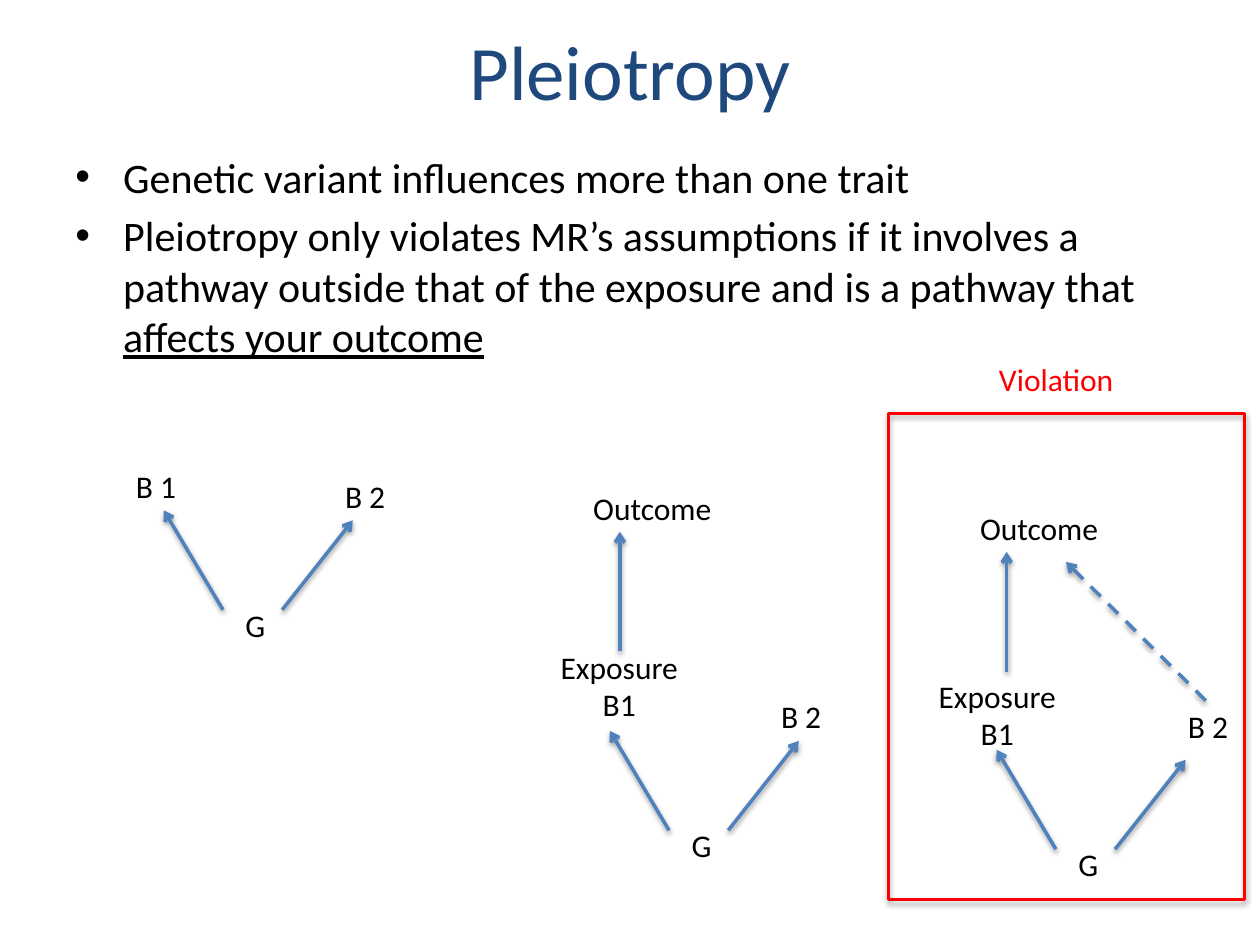
from lxml import etree
from pptx import Presentation
from pptx.dml.color import RGBColor
from pptx.enum import dml, shapes, text
from pptx.oxml import ns
from pptx.util import Inches, Pt

FONT = "Calibri"
BLACK, RED, BLUE, NAVY = "000000", "FF0000", "4F81BD", "1F497D"

TITLE = "Pleiotropy"
BULLETS = [
    [("Genetic variant influences more than one trait", False)],
    [("Pleiotropy only violates MR’s assumptions if it involves a pathway "
      "outside that of the exposure and is a pathway that ", False),
     ("affects your outcome", True)],
]

# Each diagram: gene position, labels as (lines, left, top, width), outcome position
DIAGRAMS = [
    {"gene": (1.85, 4.76), "outcome": None,
     "labels": [(["B 1"], 0.98, 3.66, 1.57), (["B 2"], 2.64, 3.74, 1.57)]},
    {"gene": (5.39, 6.51), "outcome": (4.61, 3.83),
     "labels": [(["Exposure", "B1"], 4.13, 5.09, 1.57), (["B 2"], 6.1, 5.48, 0.71)]},
    {"gene": (8.46, 6.66), "outcome": (7.68, 3.99),
     "labels": [(["Exposure", "B1"], 7.13, 5.32, 1.57), (["B 2"], 9.33, 5.56, 0.71)]},
]
# Arrow ends measured from the corner of the label they belong to
GENE_ARROWS = [((-0.08, 0.08), (-0.55, -0.71)), ((0.39, 0.08), (0.95, -0.63))]
OUTCOME_ARROW = ((0.31, 1.34), (0.31, 0.39))
SIDE_PATH = ((9.57, 5.56), (8.46, 4.46))
VIOLATION_FRAME = (7.05, 3.28, 2.83, 3.86)


def color(value):
    return RGBColor.from_string(value)


def add_span(para, words, size=18, fill=BLACK, underline=None):
    span = para.add_run()
    span.text = words
    span.font.name = FONT
    span.font.size = Pt(size)
    span.font.color.rgb = color(fill)
    span.font.underline = underline


def add_label(page, lines, left, top, width, fill=BLACK, wrap=True):
    box = page.shapes.add_textbox(Inches(left), Inches(top), Inches(width),
                                  Inches(0.4 if len(lines) == 1 else 0.71))
    frame = box.text_frame
    frame.word_wrap = wrap
    frame.auto_size = text.MSO_AUTO_SIZE.SHAPE_TO_FIT_TEXT
    for index, line in enumerate(lines):
        para = frame.paragraphs[0] if index == 0 else frame.add_paragraph()
        if len(lines) > 1:
            para.alignment = text.PP_ALIGN.CENTER
        add_span(para, line, fill=fill)


def add_shadow(shape, distance, opacity):
    """Cast a soft black shadow straight down."""
    effects = etree.SubElement(shape._element.spPr, ns.qn("a:effectLst"))
    outer = etree.SubElement(effects, ns.qn("a:outerShdw"), blurRad=str(Pt(3.1)),
                             dist=str(Pt(distance)), dir="5400000", rotWithShape="0")
    black = etree.SubElement(outer, ns.qn("a:srgbClr"), val=BLACK)
    etree.SubElement(black, ns.qn("a:alpha"), val=str(opacity * 1000))


def add_arrow(page, start, end, origin=(0, 0), dashed=False):
    ends = [Inches(base + offset) for point in (start, end)
            for base, offset in zip(origin, point)]
    arrow = page.shapes.add_connector(shapes.MSO_CONNECTOR.STRAIGHT, *ends)
    arrow.line.color.rgb = color(BLUE)
    arrow.line.width = Pt(2)
    if dashed:
        arrow.line.dash_style = dml.MSO_LINE.DASH
    etree.SubElement(arrow.line._get_or_add_ln(), ns.qn("a:tailEnd"), type="arrow")
    add_shadow(arrow, 1.6, 38)


def add_title(page):
    title = page.shapes.title
    title.left, title.top = Inches(0.5), Inches(0.05)
    title.width, title.height = Inches(9), Inches(1.01)
    title.text_frame.vertical_anchor = text.MSO_ANCHOR.MIDDLE
    para = title.text_frame.paragraphs[0]
    para.alignment = text.PP_ALIGN.CENTER
    add_span(para, TITLE, size=44, fill=NAVY)


def add_bullets(page):
    box = page.shapes.add_textbox(Inches(0.5), Inches(1.15), Inches(9), Inches(5.55))
    frame = box.text_frame
    frame.word_wrap = True
    for index, spans in enumerate(BULLETS):
        para = frame.paragraphs[0] if index == 0 else frame.add_paragraph()
        para.space_before = Pt(4.8)
        layout = para._p.get_or_add_pPr()
        layout.set("marL", str(Inches(0.38)))
        layout.set("indent", str(Inches(-0.38)))
        etree.SubElement(layout, ns.qn("a:buFont"), typeface="Arial")
        etree.SubElement(layout, ns.qn("a:buChar"), char="•")
        for words, underline in spans:
            add_span(para, words, size=24, underline=underline or None)


def add_diagram(page, gene, labels, outcome):
    add_label(page, ["G"], *gene, 0.36, wrap=False)
    for label in labels:
        add_label(page, *label)
    for start, end in GENE_ARROWS:
        add_arrow(page, start, end, origin=gene)
    if outcome:
        add_label(page, ["Outcome"], *outcome, 1.42)
        add_arrow(page, *OUTCOME_ARROW, origin=outcome)


def add_violation(page):
    add_arrow(page, *SIDE_PATH, dashed=True)
    frame = page.shapes.add_shape(shapes.MSO_SHAPE.RECTANGLE,
                                  *map(Inches, VIOLATION_FRAME))
    frame.fill.background()
    frame.line.color.rgb = color(RED)
    frame.line.width = Pt(1.75)
    add_shadow(frame, 1.8, 35)
    add_label(page, ["Violation"], 7.83, 2.81, 1.12, fill=RED, wrap=False)


def main():
    deck = Presentation()
    deck.slide_width, deck.slide_height = Inches(10), Inches(7.5)
    page = deck.slides.add_slide(deck.slide_layouts.get_by_name("Title Only"))
    add_title(page)
    add_bullets(page)
    for diagram in DIAGRAMS:
        add_diagram(page, **diagram)
    add_violation(page)
    deck.save("out.pptx")


if __name__ == "__main__":
    main()
